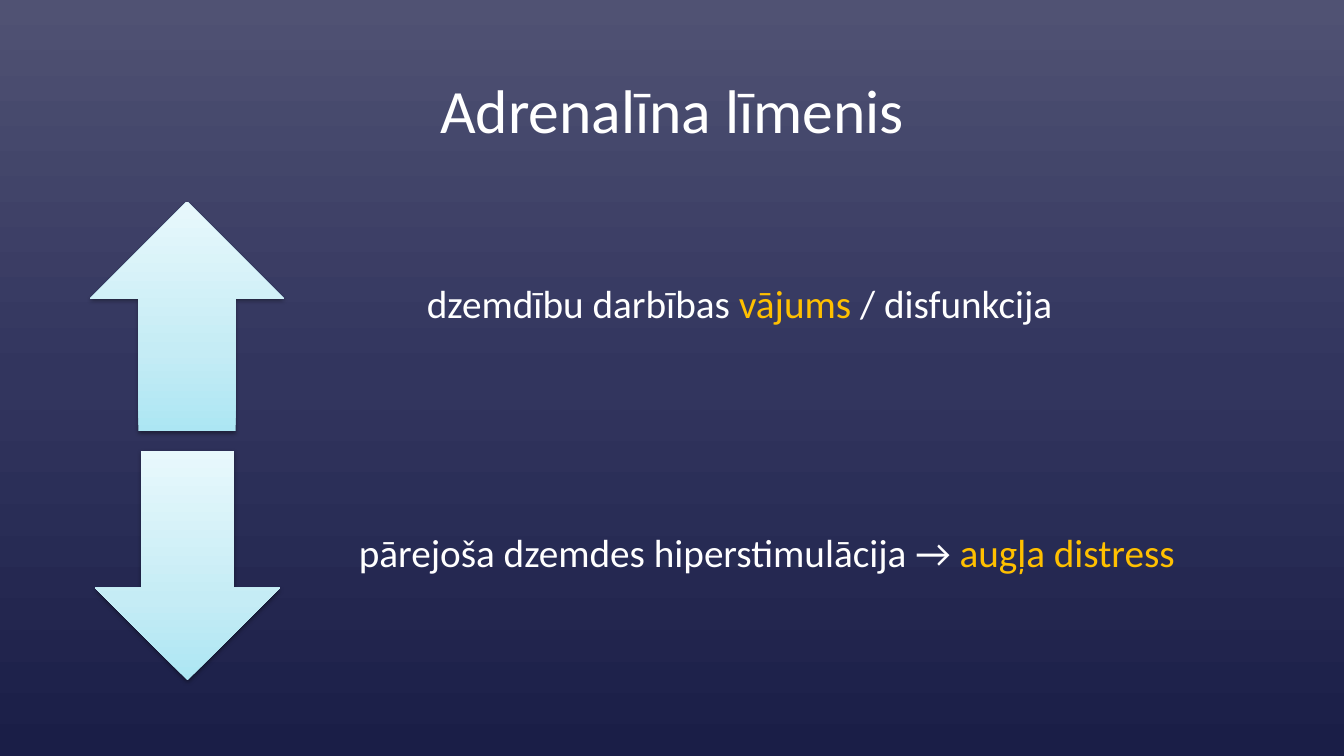
"""Builds a slide on adrenaline level and its effects on labour."""
from dataclasses import dataclass

from lxml.etree import SubElement
from pptx import Presentation
from pptx.dml.color import RGBColor
from pptx.dml.fill import FillFormat
from pptx.enum.shapes import MSO_SHAPE
from pptx.enum.text import MSO_ANCHOR, PP_ALIGN
from pptx.oxml.ns import qn
from pptx.oxml.xmlchemy import BaseOxmlElement
from pptx.shapes.autoshape import Shape
from pptx.slide import Slide
from pptx.text.text import TextFrame
from pptx.util import Inches, Pt

COLORS = {
    "text": "FFFFFF", "accent": "FFC000", "shadow": "000000",
    "bg_top": "505273", "bg_mid": "32355E", "bg_end": "1A1E47",
    "arrow_deep": "ACE6F3", "arrow_mid": "C5ECF5", "arrow_pale": "E8F8FC",
}
BG_STOPS = [(0, "bg_top"), (50, "bg_mid"), (100, "bg_end")]
ARROW_STOPS = [(0, "arrow_deep"), (35, "arrow_mid"), (100, "arrow_pale")]
ROW_HEIGHT = 2.28


@dataclass
class Effect:
    """An arrow with the consequence written beside it."""
    arrow: MSO_SHAPE
    top: float
    arrow_left: float
    arrow_width: float
    text_left: float
    text_width: float
    runs: list[tuple[str, str]]


EFFECTS = [
    Effect(MSO_SHAPE.UP_ARROW, 2, 0.89, 1.93, 3.84, 6.99,
           [("dzemdību darbības ", "text"), ("vājums", "accent"),
            (" / disfunkcija", "text")]),
    Effect(MSO_SHAPE.DOWN_ARROW, 4.47, 0.94, 1.84, 2.76, 9.69,
           [("pārejoša dzemdes hiperstimulācija → ", "text"),
            ("augļa distress", "accent")]),
]


def set_gradient(fill: FillFormat, root: BaseOxmlElement,
                 stops: list[tuple[int, str]], angle: int) -> None:
    """Fill with a linear gradient, its angle in clockwise degrees."""
    fill.gradient()
    grad = root.find(".//" + qn("a:gradFill"))
    for child in list(grad):
        grad.remove(child)
    gs_lst = SubElement(grad, qn("a:gsLst"))
    for pos, color in stops:
        gs = SubElement(gs_lst, qn("a:gs"), pos=str(pos * 1000))
        SubElement(gs, qn("a:srgbClr"), val=COLORS[color])
    SubElement(grad, qn("a:lin"), ang=str(angle * 60000), scaled="0")


def add_shadow(sp: Shape) -> None:
    """Give a shape a soft shadow straight below it."""
    sp.shadow.inherit = False
    effects = sp.element.spPr.find(qn("a:effectLst"))
    shadow = SubElement(effects, qn("a:outerShdw"), blurRad=str(Pt(3.1)),
                        dist=str(Pt(1.6)), dir="5400000", rotWithShape="0")
    color = SubElement(shadow, qn("a:srgbClr"), val=COLORS["shadow"])
    SubElement(color, qn("a:alpha"), val="38000")


def write_text(tf: TextFrame, runs: list[tuple[str, str]], size: int) -> None:
    """Write one centred paragraph of coloured runs."""
    tf.word_wrap = True
    tf.vertical_anchor = MSO_ANCHOR.MIDDLE
    p = tf.paragraphs[0]
    p.alignment = PP_ALIGN.CENTER
    p.line_spacing = 0.9
    for text, color in runs:
        r = p.add_run()
        r.text = text
        r.font.name = "Calibri"
        r.font.size = Pt(size)
        r.font.color.rgb = RGBColor.from_string(COLORS[color])


def add_effect(s: Slide, effect: Effect) -> None:
    """Draw an arrow and its consequence."""
    top, height = Inches(effect.top), Inches(ROW_HEIGHT)
    sp = s.shapes.add_shape(effect.arrow, Inches(effect.arrow_left), top,
                            Inches(effect.arrow_width), height)
    set_gradient(sp.fill, sp.element.spPr, ARROW_STOPS, 270)
    sp.line.fill.background()
    add_shadow(sp)
    tf = s.shapes.add_textbox(Inches(effect.text_left), top,
                              Inches(effect.text_width), height).text_frame
    tf.margin_left = tf.margin_right = tf.margin_bottom = Inches(0.22)
    tf.margin_top = 0
    write_text(tf, effect.runs, 28)


def main() -> None:
    """Build and save the presentation."""
    prs = Presentation()
    prs.slide_width, prs.slide_height = Inches(13.33), Inches(7.5)
    s = prs.slides.add_slide(prs.slide_layouts[5])
    set_gradient(s.background.fill, s.element, BG_STOPS, 90)
    title = s.shapes.title
    title.left, title.top = Inches(0.92), Inches(0.4)
    title.width, title.height = Inches(11.5), Inches(1.45)
    write_text(title.text_frame, [("Adrenalīna līmenis", "text")], 44)
    for effect in EFFECTS:
        add_effect(s, effect)
    prs.save("out.pptx")


if __name__ == "__main__":
    main()
